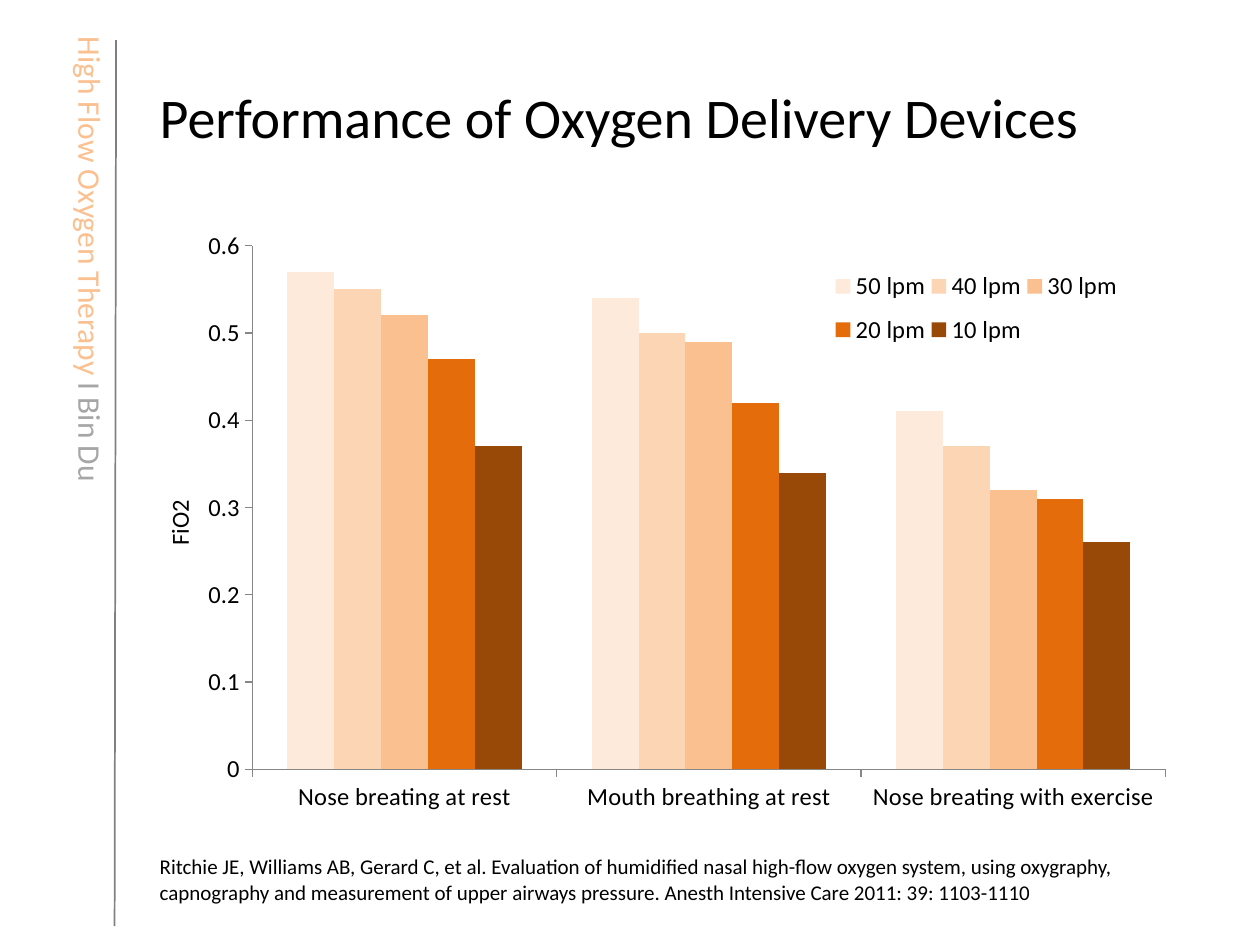
from lxml.etree import SubElement
from pptx import Presentation
from pptx.chart.data import CategoryChartData
from pptx.dml.color import RGBColor
from pptx.enum.chart import XL_CHART_TYPE as ChartType
from pptx.enum.chart import XL_LEGEND_POSITION as LegendPosition
from pptx.enum.chart import XL_TICK_MARK as TickMark
from pptx.enum.shapes import MSO_CONNECTOR as Connector
from pptx.enum.text import MSO_ANCHOR as Anchor
from pptx.oxml import parse_xml
from pptx.oxml.ns import nsdecls, qn
from pptx.util import Cm, Pt

FONT = "Calibri"
BLACK = RGBColor(0x00, 0x00, 0x00)
RULE_GRAY = RGBColor(0x80, 0x80, 0x80)
AXIS_GRAY = RGBColor(0x86, 0x86, 0x86)
AUTHOR_GRAY = RGBColor(0xA6, 0xA6, 0xA6)
PEACH = RGBColor(0xFA, 0xC0, 0x90)

# Content column shared by title, chart and citation
LEFT, WIDTH = 2.97, 21.16

DEVICES = ["Nose breating at rest", "Mouth breathing at rest",
           "Nose breating with exercise"]
FLOWS = [
    ("50 lpm", (0.57, 0.54, 0.41), RGBColor(0xFD, 0xEA, 0xDA)),
    ("40 lpm", (0.55, 0.5, 0.37), RGBColor(0xFC, 0xD5, 0xB5)),
    ("30 lpm", (0.52, 0.49, 0.32), PEACH),
    ("20 lpm", (0.47, 0.42, 0.31), RGBColor(0xE4, 0x6C, 0x0A)),
    ("10 lpm", (0.37, 0.34, 0.26), RGBColor(0x98, 0x48, 0x07)),
]
CITATION = ("Ritchie JE, Williams AB, Gerard C, et al. Evaluation of humidified "
            "nasal high-flow oxygen system, using oxygraphy, capnography and "
            "measurement of upper airways pressure. Anesth Intensive Care 2011: "
            "39: 1103-1110")


def apply_format(target, values):
    for name, value in values.items():
        setattr(target, name, value)


def format_font(font, size, color):
    apply_format(font, {"name": FONT, "size": Pt(size), "bold": False})
    font.color.rgb = color


def add_text(slide, box, size, pieces, wrap=True, anchor=Anchor.TOP):
    """Add one paragraph made of (text, color) pieces."""
    text_box = slide.shapes.add_textbox(*map(Cm, box))
    frame = text_box.text_frame
    apply_format(frame, {"word_wrap": wrap, "vertical_anchor": anchor})
    for text, color in pieces:
        run = frame.paragraphs[0].add_run()
        run.text = text
        format_font(run.font, size, color)
    return text_box


def add_rule(slide, start, end):
    rule = slide.shapes.add_connector(
        Connector.STRAIGHT, *map(Cm, start + end))
    rule.line.color.rgb = RULE_GRAY
    rule.line.width = Pt(1)
    SubElement(rule._element.spPr, qn("a:effectLst"))


def place(element, index, **fractions):
    """Give a chart part a fixed layout, as fractions of the chart."""
    for old in element.findall(qn("c:layout")):
        element.remove(old)
    layout = parse_xml(f"<c:layout {nsdecls('c')}/>")
    manual = SubElement(layout, qn("c:manualLayout"))
    settings = {"xMode": "edge", "yMode": "edge", **fractions}
    if element.tag == qn("c:plotArea"):
        settings = {"layoutTarget": "inner", **settings}
    for name, value in settings.items():
        SubElement(manual, qn(f"c:{name}")).set("val", str(value))
    element.insert(index, layout)


def format_axis(axis):
    apply_format(axis, {"has_major_gridlines": False,
                        "major_tick_mark": TickMark.OUTSIDE,
                        "minor_tick_mark": TickMark.NONE})
    axis.format.line.color.rgb = AXIS_GRAY
    axis.format.line.width = Pt(0.75)


def add_fio2_chart(slide, box):
    data = CategoryChartData(number_format="General")
    data.categories = DEVICES
    for flow, values, _ in FLOWS:
        data.add_series(flow, values)
    chart = slide.shapes.add_chart(
        ChartType.COLUMN_CLUSTERED, *map(Cm, box), data).chart
    chart.has_title = False
    format_font(chart.font, 14, BLACK)

    # Columns
    plot = chart.plots[0]
    apply_format(plot, {"gap_width": 150, "overlap": 0,
                        "vary_by_categories": False})
    for series, (_, _, color) in zip(plot.series, FLOWS):
        series.format.fill.solid()
        series.format.fill.fore_color.rgb = color
    place(chart._chartSpace.chart.plotArea, 0, x=0.1, y=0.04, w=0.87, h=0.84)

    # Axes
    fio2_axis = chart.value_axis
    for axis in (chart.category_axis, fio2_axis):
        format_axis(axis)
    apply_format(fio2_axis, {"minimum_scale": 0, "maximum_scale": 0.6,
                             "major_unit": 0.1})
    fio2_title = fio2_axis.axis_title
    fio2_title.text_frame.text = "FiO2"
    format_font(fio2_title.text_frame.paragraphs[0].runs[0].font, 14, BLACK)
    place(fio2_title._element, 1, x=0.01, y=0.44)

    # Legend
    chart.has_legend = True
    apply_format(chart.legend, {"position": LegendPosition.RIGHT,
                                "include_in_layout": False})
    place(chart.legend._element, 1, x=0.65, y=0.06, w=0.28, h=0.16)


def main():
    deck = Presentation()
    deck.slide_width, deck.slide_height = Cm(25.4), Cm(19.05)
    slide = deck.slides.add_slide(deck.slide_layouts[6])

    # Side strip
    add_rule(slide, (2.34, 0.81), (2.31, 18.67))
    running_head = add_text(
        slide, (-2.97, 4.78, 9.6, 1.02), 18,
        [("High Flow Oxygen Therapy ", PEACH), ("Ι Bin Du", AUTHOR_GRAY)],
        wrap=False)
    running_head.rotation = 90

    # Title, chart and citation
    add_text(slide, (LEFT, 0.76, WIDTH, 3.18), 32,
             [("Performance of Oxygen Delivery Devices", BLACK)],
             anchor=Anchor.MIDDLE)
    add_fio2_chart(slide, (LEFT, 4.45, WIDTH, 12.57))
    add_text(slide, (LEFT, 17.09, WIDTH, 1.27), 12, [(CITATION, BLACK)])

    deck.save("out.pptx")


if __name__ == "__main__":
    main()
